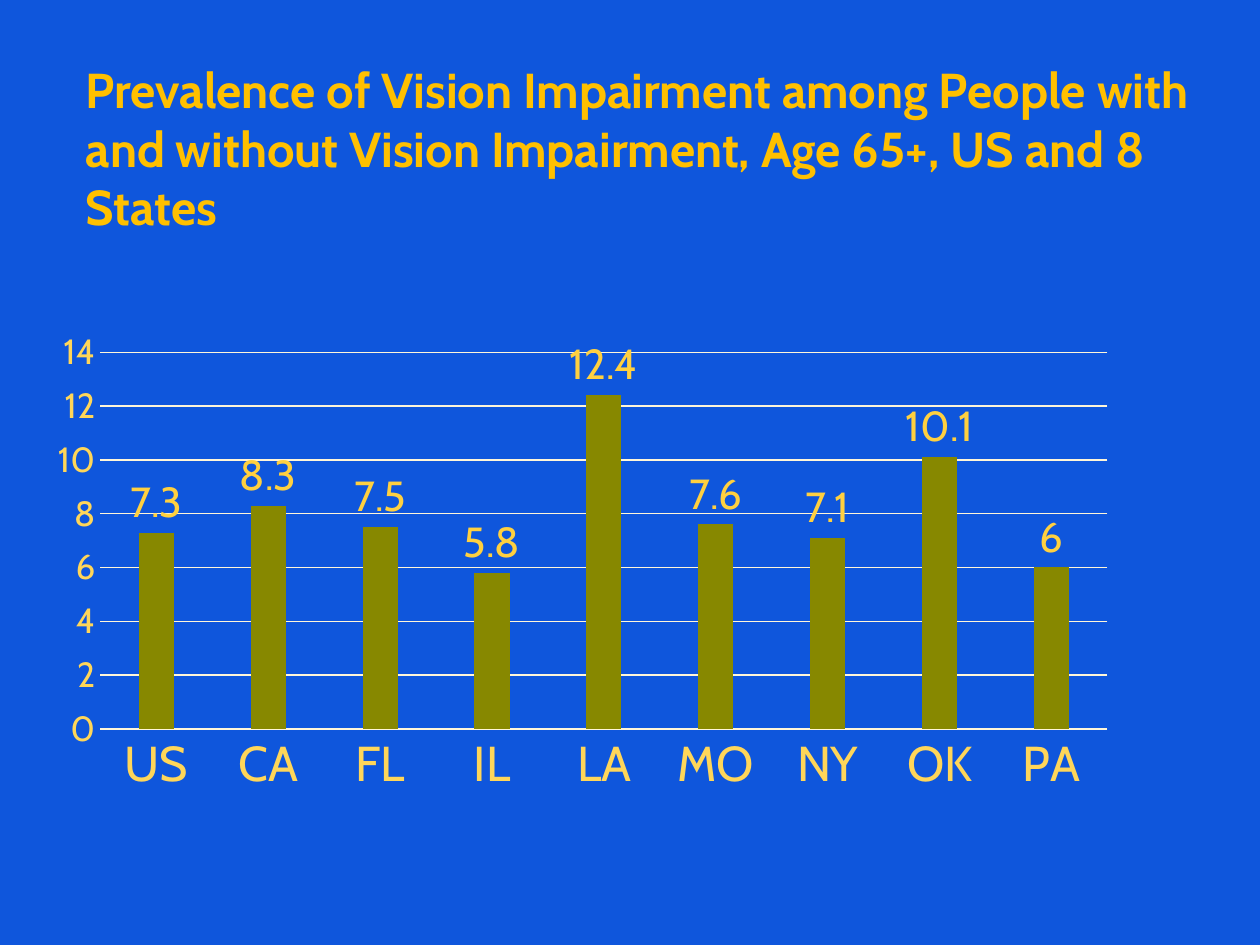
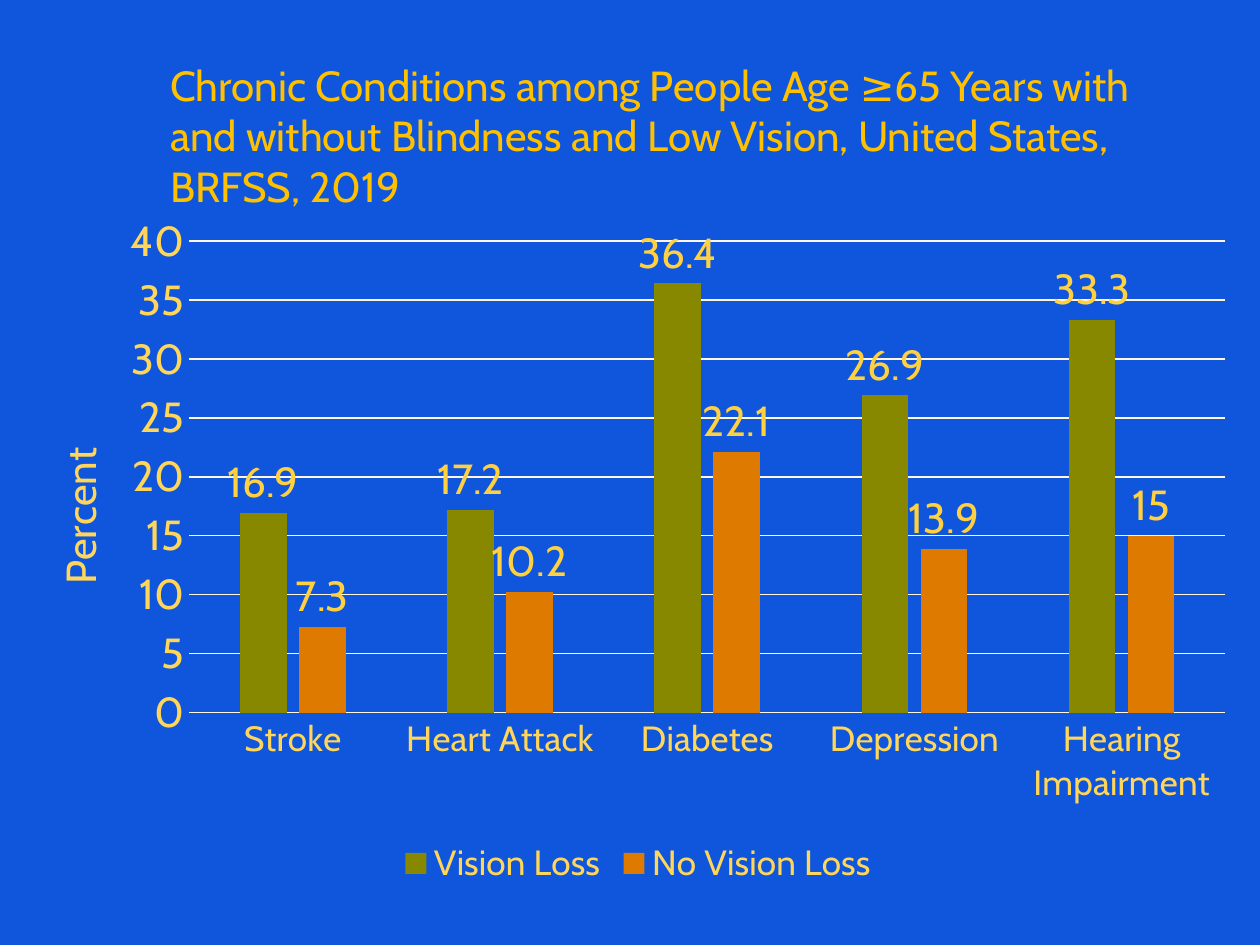
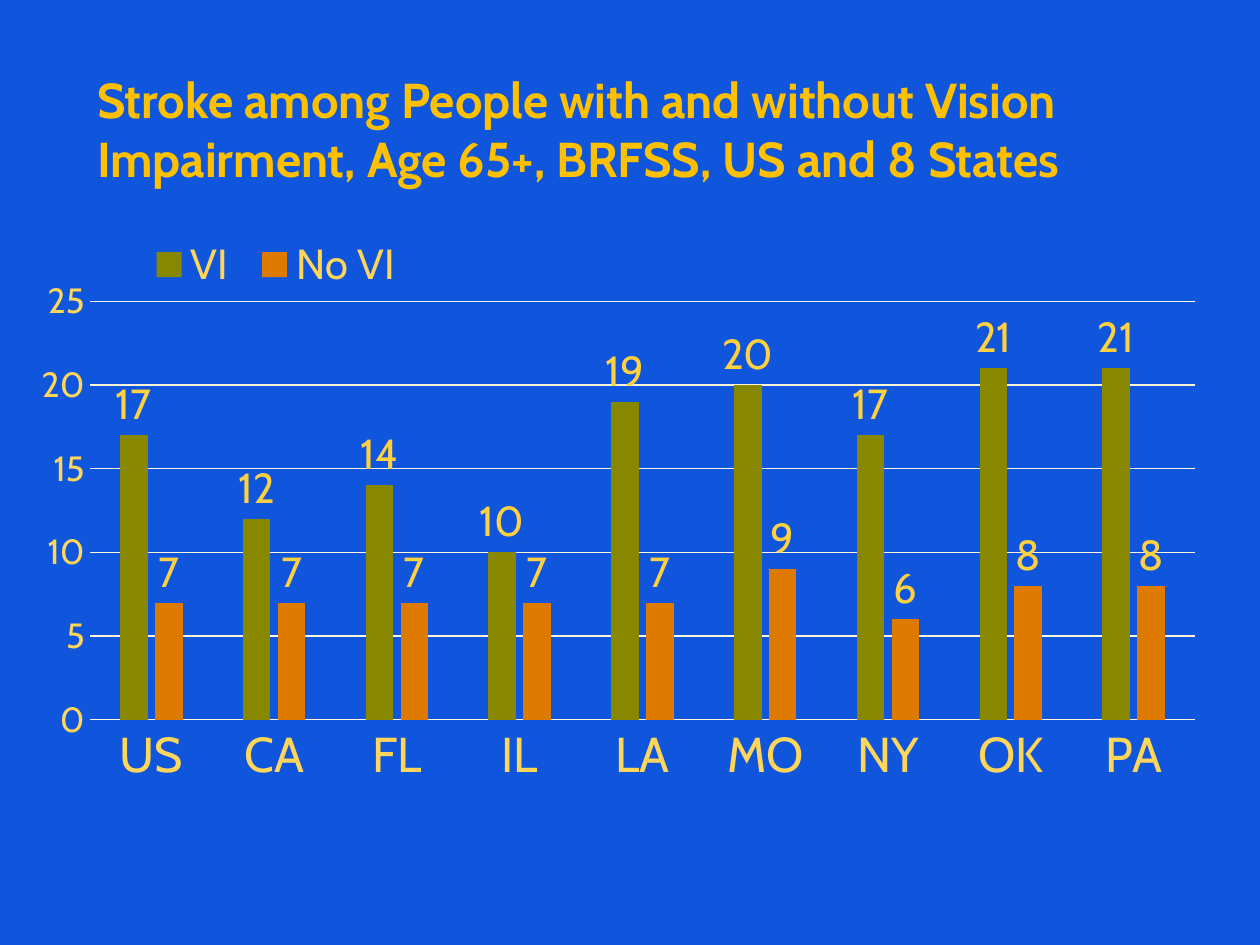
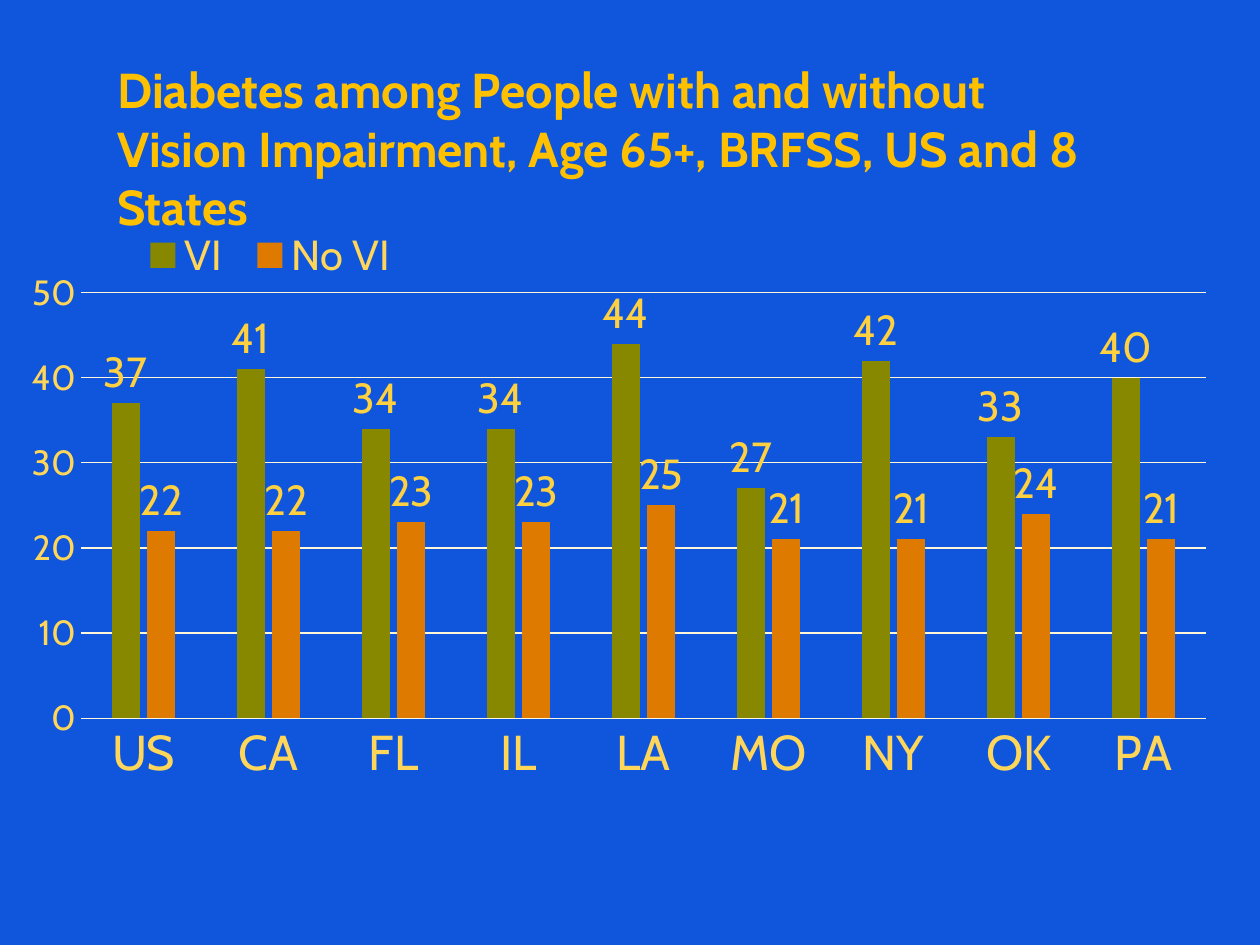
"""Build four slides on vision impairment and chronic conditions at age 65+."""
from dataclasses import dataclass

from lxml import etree
from pptx import Presentation
from pptx.chart.data import CategoryChartData
from pptx.dml.color import RGBColor
from pptx.enum.chart import XL_CHART_TYPE, XL_LABEL_POSITION, XL_LEGEND_POSITION, XL_TICK_MARK
from pptx.enum.text import MSO_ANCHOR, MSO_AUTO_SIZE, PP_ALIGN
from pptx.oxml.ns import qn
from pptx.util import Inches, Pt

COLUMNS = XL_CHART_TYPE.COLUMN_CLUSTERED
OUTSIDE_END = XL_LABEL_POSITION.OUTSIDE_END
LEGEND_BOTTOM = XL_LEGEND_POSITION.BOTTOM
NO_TICKS = XL_TICK_MARK.NONE
TOP = MSO_ANCHOR.TOP
NO_AUTOFIT = MSO_AUTO_SIZE.NONE
LEFT = PP_ALIGN.LEFT

BLUE = RGBColor(0x0F, 0x56, 0xDC)
GOLD = RGBColor(0xFF, 0xC0, 0x00)
LABEL_GOLD = RGBColor(0xFF, 0xD0, 0x40)
AXIS_GOLD = RGBColor(0xFF, 0xD6, 0x59)
CREAM = RGBColor(0xFF, 0xF6, 0xD9)
OLIVE = RGBColor(0x87, 0x88, 0x00)
ORANGE = RGBColor(0xDF, 0x7A, 0x00)
SERIES_COLORS = (OLIVE, ORANGE)

FONT = "Cabin"
WIDTH, HEIGHT = Inches(10), Inches(7.5)
GRID_COLUMN, GRID_ROW = WIDTH / 10, HEIGHT / 7.5
TITLE_ONLY = 5

STATES = ("US", "CA", "FL", "IL", "LA", "MO", "NY", "OK", "PA")
CONDITIONS = ("Stroke", "Heart Attack", "Diabetes", "Depression", "Hearing Impairment")
STATE_PLOT = (0.03, 0.137, 0.951, 0.71)
CONDITION_PLOT = (0.13, 0.136, 0.854, 0.626)
STATE_LEGEND = (0.07, 0.02, 0.24, 0.11)
AXIS_TITLE_SPOT = (0.01, 0.4)


@dataclass
class ChartSlide:
    """Content and grid boxes of one title-and-chart slide."""

    title: str
    title_box: tuple
    chart_box: tuple
    series: dict
    scale: tuple
    categories: tuple = STATES
    plot: tuple = STATE_PLOT
    legend_spot: tuple = STATE_LEGEND
    legend_size: int = 24
    title_size: int = 28
    title_bold: bool = True
    category_size: int = 28
    value_size: int = 20
    value_title: str = ""


SLIDES = (
    ChartSlide(
        "Prevalence of Vision Impairment among People with and without "
        "Vision Impairment, Age 65+, US and 8 States",
        (0.58, 0.42, 8.96, 1.51), (0.46, 2.22, 8.49, 4.21),
        {"Series 1": (7.3, 8.3, 7.5, 5.8, 12.4, 7.6, 7.1, 10.1, 6)}, (14, 2),
    ),
    ChartSlide(
        "Chronic Conditions among People Age ≥65 Years with and without "
        "Blindness and Low Vision, United States, BRFSS, 2019",
        (1.25, 0.42, 8.17, 1.31), (0.25, 1.1, 9.63, 5.98),
        {"Vision Loss": (16.9, 17.2, 36.4, 26.9, 33.3),
         "No Vision Loss": (7.3, 10.2, 22.1, 13.9, 15)}, (40, 5),
        categories=CONDITIONS, plot=CONDITION_PLOT, legend_spot=(),
        legend_size=20, title_size=24, title_bold=False,
        category_size=20, value_size=24, value_title="Percent",
    ),
    ChartSlide(
        "Stroke among People with and without Vision Impairment, Age 65+, "
        "BRFSS, US and 8 States",
        (0.67, 0.5, 8.28, 1.51), (0.33, 1.75, 9.33, 4.68),
        {"VI": (17, 12, 14, 10, 19, 20, 17, 21, 21),
         "No VI": (7, 7, 7, 7, 7, 9, 6, 8, 8)}, (25, 5),
    ),
    ChartSlide(
        "Diabetes among People with and without Vision Impairment, Age 65+, "
        "BRFSS, US and 8 States",
        (0.83, 0.42, 8.11, 1.51), (0.25, 1.67, 9.5, 4.76),
        {"VI": (37, 41, 34, 34, 44, 27, 42, 33, 40),
         "No VI": (22, 22, 23, 23, 25, 21, 21, 24, 21)}, (50, 10),
    ),
)


def on_grid(box):
    """Turn a box in grid columns and rows into slide lengths."""
    left, top, width, height = box
    return (round(left * GRID_COLUMN), round(top * GRID_ROW),
            round(width * GRID_COLUMN), round(height * GRID_ROW))


def style_font(font, size, color, bold=False):
    """Apply the shared typeface with a size, colour and weight."""
    font.name, font.size, font.bold = FONT, Pt(size), bold
    font.color.rgb = color


def place_part(part, index, shares, inner=False):
    """Fix a chart part at shares of the chart's size."""
    for old_layout in part.findall(qn("c:layout")):
        part.remove(old_layout)
    layout = etree.Element(qn("c:layout"))
    part.insert(index, layout)
    manual = etree.SubElement(layout, qn("c:manualLayout"))
    settings = [("layoutTarget", "inner")] if inner else []
    settings += [("xMode", "edge"), ("yMode", "edge")]
    settings += zip("xywh", shares)
    for tag, value in settings:
        etree.SubElement(manual, qn(f"c:{tag}")).set("val", str(value))


def add_title(slide, content):
    """Fill and place the title placeholder."""
    title = slide.shapes.title
    title.left, title.top, title.width, title.height = on_grid(content.title_box)
    frame = title.text_frame
    frame.text = content.title
    frame.word_wrap = True
    frame.auto_size = NO_AUTOFIT
    frame.vertical_anchor = TOP
    paragraph = frame.paragraphs[0]
    paragraph.alignment = LEFT
    style_font(paragraph.font, content.title_size, GOLD, content.title_bold)


def style_axes(chart, content):
    """Format both axes, the gridlines and the value axis title."""
    category_axis, value_axis = chart.category_axis, chart.value_axis
    for axis, size in ((category_axis, content.category_size), (value_axis, content.value_size)):
        axis.major_tick_mark = axis.minor_tick_mark = NO_TICKS
        style_font(axis.tick_labels.font, size, AXIS_GOLD)
    value_axis.format.line.fill.background()
    value_axis.minimum_scale = 0
    value_axis.maximum_scale, value_axis.major_unit = content.scale
    for line in (category_axis.format.line, value_axis.major_gridlines.format.line):
        line.color.rgb = CREAM
        line.width = Pt(0.75)
    if content.value_title:
        axis_title = value_axis.axis_title
        axis_title.text_frame.text = content.value_title
        style_font(axis_title.text_frame.paragraphs[0].font, 24, AXIS_GOLD)
        place_part(value_axis._element.find(qn("c:title")), 1, AXIS_TITLE_SPOT)


def style_columns(plot):
    """Colour the columns and label them with their values."""
    plot.gap_width, plot.overlap = 219, -27
    plot.vary_by_categories = False
    for series, color in zip(plot.series, SERIES_COLORS):
        series.format.fill.solid()
        series.format.fill.fore_color.rgb = color
        labels = series.data_labels
        labels.show_value = True
        labels.position = OUTSIDE_END
        style_font(labels.font, 24, LABEL_GOLD)


def add_legend(chart, content):
    """Show the legend when there are several series."""
    chart.has_legend = len(content.series) > 1
    if chart.has_legend:
        legend = chart.legend
        legend.position = LEGEND_BOTTOM
        legend.include_in_layout = False
        style_font(legend.font, content.legend_size, AXIS_GOLD)
        if content.legend_spot:
            place_part(legend._element, 1, content.legend_spot)


def add_column_chart(slide, content):
    """Draw the clustered column chart in its box."""
    data = CategoryChartData()
    data.categories = content.categories
    for name, values in content.series.items():
        data.add_series(name, values)
    chart = slide.shapes.add_chart(COLUMNS, *on_grid(content.chart_box), data).chart
    chart.has_title = False
    style_font(chart.font, 10, GOLD)
    style_axes(chart, content)
    style_columns(chart.plots[0])
    add_legend(chart, content)
    plot_area = chart._chartSpace.find(f".//{qn('c:plotArea')}")
    place_part(plot_area, 0, content.plot, inner=True)


def main():
    """Build and save the presentation."""
    prs = Presentation()
    prs.slide_width, prs.slide_height = WIDTH, HEIGHT
    background = prs.slide_master.background.fill
    background.solid()
    background.fore_color.rgb = BLUE
    for content in SLIDES:
        slide = prs.slides.add_slide(prs.slide_layouts[TITLE_ONLY])
        add_title(slide, content)
        add_column_chart(slide, content)
    prs.save("out.pptx")


if __name__ == "__main__":
    main()
